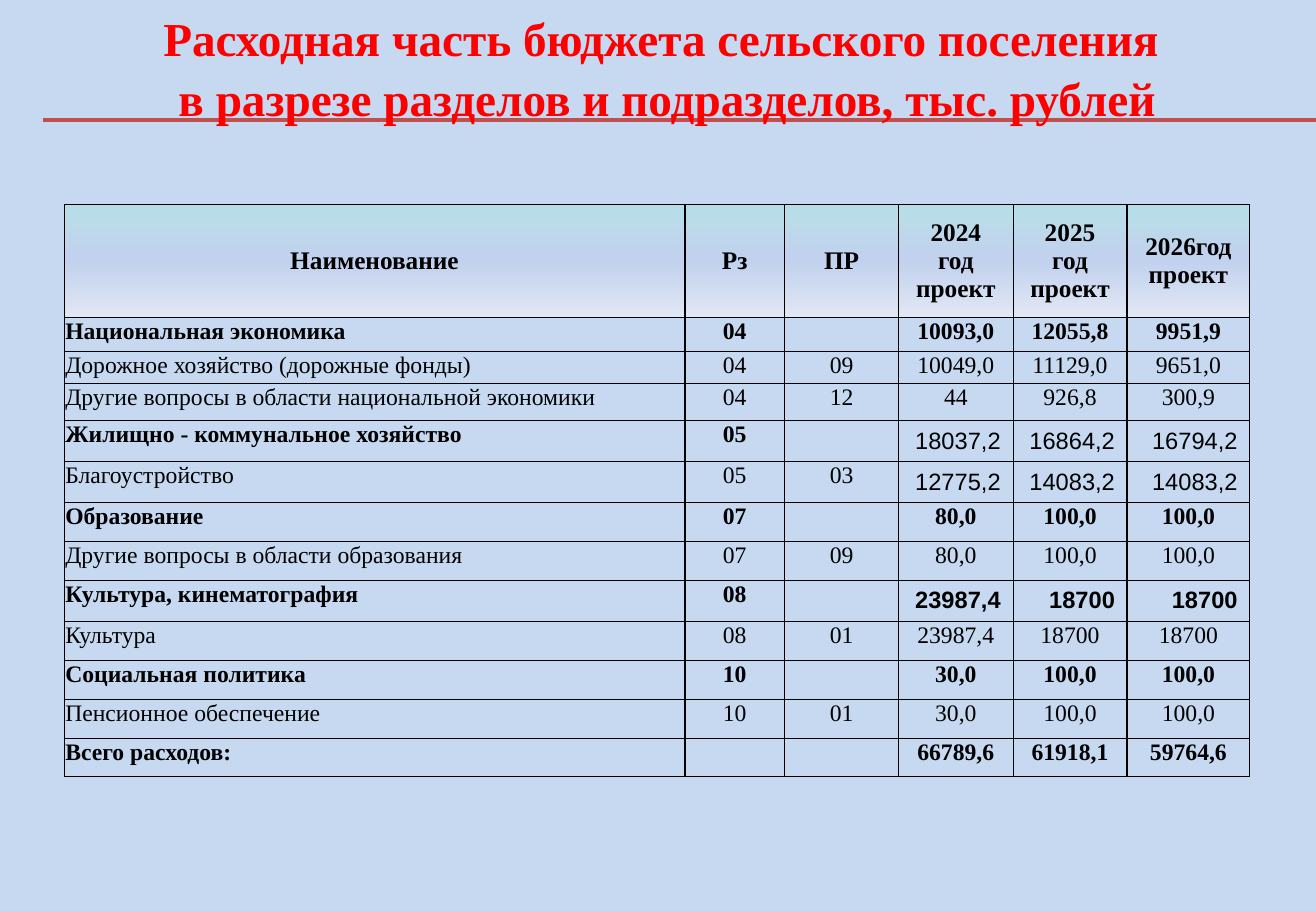
from dataclasses import dataclass

from lxml import etree
from pptx import Presentation
from pptx.dml import color
from pptx.enum import shapes, text
from pptx.oxml import ns
from pptx.util import Pt


@dataclass(frozen=True)
class Theme:
    background: str = "C6D9F1"
    title: str = "FF0000"
    rule: str = "C0504D"
    ink: str = "000000"
    header: tuple = ((0, "B7DEE8"), (50, "C2D1ED"), (100, "E1E8F5"))
    serif: str = "Times New Roman"
    sans: str = "Arial"
    title_size: int = 28
    header_size: int = 15
    body_size: int = 14


THEME = Theme()
ALIGN = text.PP_ALIGN
ANCHOR = text.MSO_ANCHOR
TITLE = ("Расходная часть бюджета сельского поселения ",
         "в разрезе разделов и подразделов, тыс. рублей")
HEADERS = ("Наименование", "Рз", "ПР", "2024 год\nпроект", "2025 год проект", "2026год\nпроект")
COLUMNS = (368, 59, 67.7, 67.7, 67.7, 72.7)
HEADER_HEIGHT = 67
ROWS = (
    (20, "Национальная экономика", "04", "", "10093,0", "12055,8", "9951,9"),
    (19, "Дорожное хозяйство (дорожные фонды) ", "04", "09", "10049,0", "11129,0", "9651,0"),
    (22, "Другие вопросы в области национальной экономики", "04", "12", "44", "926,8", "300,9"),
    (24.3, "Жилищно - коммунальное хозяйство", "05", "", "18037,2", "16864,2", "16794,2"),
    (24.3, "Благоустройство", "05", "03", "12775,2", "14083,2", "14083,2"),
    (23.1, "Образование", "07", "", "80,0", "100,0", "100,0"),
    (23.1, "Другие вопросы в области образования", "07", "09", "80,0", "100,0", "100,0"),
    (24.3, "Культура, кинематография ", "08", "", "23987,4", "18700", "18700"),
    (23.1, "Культура ", "08", "01", "23987,4", "18700", "18700"),
    (23.1, "Социальная политика", "10", "", "30,0", "100,0", "100,0"),
    (23.1, "Пенсионное обеспечение", "10", "01", "30,0", "100,0", "100,0"),
    (23.1, "Всего расходов:", "", "", "66789,6", "61918,1", "59764,6"),
)
SANS_ROWS = {"Жилищно - коммунальное хозяйство": False,
             "Благоустройство": False,
             "Культура, кинематография ": True}


def rgb(value):
    return color.RGBColor.from_string(value)


def add_run(p, content, size, ink, bold=True, font=THEME.serif):
    r = p.add_run()
    r.text = content
    r.font.size = Pt(size)
    r.font.name = font
    r.font.bold = bold
    r.font.color.rgb = rgb(ink)


def add_title(s):
    sp = s.shapes.add_textbox(Pt(33), Pt(0), Pt(724.5), Pt(75))
    tf = sp.text_frame
    tf.word_wrap = True
    p = tf.paragraphs[0]
    p.alignment = ALIGN.CENTER
    p.line_spacing = 1.06
    for i, line in enumerate(TITLE):
        if i:
            p.add_line_break()
        add_run(p, line, THEME.title_size, THEME.title)


def add_rule(s, left, right, y):
    line = s.shapes.add_connector(shapes.MSO_CONNECTOR.STRAIGHT, Pt(left), Pt(y), Pt(right), Pt(y))
    line.line.color.rgb = rgb(THEME.rule)
    line.line.width = Pt(2.5)
    etree.SubElement(line._element.spPr, ns.qn("a:effectLst"))


def set_borders(cell, row, col):
    widths = {
        "L": 1 if col % 2 else 0.5,
        "R": 0.5 if col % 2 else 1,
        "T": 1 if row == 1 else 0.5,
        "B": 1 if row == 0 else 0.5,
    }
    tc_pr = cell._tc.get_or_add_tcPr()
    for i, (side, width) in enumerate(widths.items()):
        ln = etree.Element(ns.qn(f"a:ln{side}"), w=str(Pt(width)))
        fill = etree.SubElement(ln, ns.qn("a:solidFill"))
        etree.SubElement(fill, ns.qn("a:srgbClr"), val=THEME.ink)
        tc_pr.insert(i, ln)


def set_gradient(cell):
    grad = etree.SubElement(cell._tc.get_or_add_tcPr(), ns.qn("a:gradFill"))
    stops = etree.SubElement(grad, ns.qn("a:gsLst"))
    for position, value in THEME.header:
        stop = etree.SubElement(stops, ns.qn("a:gs"), pos=str(position * 1000))
        etree.SubElement(stop, ns.qn("a:srgbClr"), val=value)
    etree.SubElement(grad, ns.qn("a:lin"), ang="5400000", scaled="0")


def set_margins(cell, left, top, right, bottom):
    cell.margin_left, cell.margin_top = Pt(left), Pt(top)
    cell.margin_right, cell.margin_bottom = Pt(right), Pt(bottom)


def fill_header(cell, content):
    set_gradient(cell)
    set_margins(cell, 6.5, 5.5, 6.5, 5.5)
    cell.vertical_anchor = ANCHOR.MIDDLE
    tf = cell.text_frame
    for i, line in enumerate(content.split("\n")):
        p = tf.add_paragraph() if i else tf.paragraphs[0]
        p.alignment = ALIGN.CENTER
        add_run(p, line, THEME.header_size, THEME.ink)


def fill_body(cell, content, col, bold, sans):
    cell.fill.background()
    p = cell.text_frame.paragraphs[0]
    if sans:
        set_margins(cell, 7.2, 3.6, 7.2, 3.6)
        cell.vertical_anchor = ANCHOR.MIDDLE
        p.alignment = ALIGN.RIGHT
    else:
        set_margins(cell, 0.7, 0.7, 0.7, 0)
        cell.vertical_anchor = ANCHOR.TOP
        p.alignment = ALIGN.CENTER if col else ALIGN.JUSTIFY
    if content:
        add_run(p, content, THEME.body_size, THEME.ink, bold, THEME.sans if sans else THEME.serif)
    else:
        etree.SubElement(p._p, ns.qn("a:endParaRPr"), sz=str(THEME.body_size * 100))


def add_budget_table(s):
    heights = [HEADER_HEIGHT] + [row[0] for row in ROWS]
    frame = s.shapes.add_table(len(heights), len(COLUMNS), Pt(38), Pt(121.2),
                               Pt(sum(COLUMNS)), Pt(sum(heights)))
    table = frame.table
    table.first_row = table.horz_banding = False
    for column, width in zip(table.columns, COLUMNS):
        column.width = Pt(width)
    for row, height in zip(table.rows, heights):
        row.height = Pt(height)
    for col, content in enumerate(HEADERS):
        cell = table.cell(0, col)
        fill_header(cell, content)
        set_borders(cell, 0, col)
    for i, (_, *values) in enumerate(ROWS, 1):
        name, _, subsection = values[:3]
        for col, content in enumerate(values):
            cell = table.cell(i, col)
            sans = col > 2 and name in SANS_ROWS
            bold = SANS_ROWS[name] if sans else not subsection
            fill_body(cell, content, col, bold, sans)
            set_borders(cell, i, col)


def main():
    prs = Presentation()
    prs.slide_width, prs.slide_height = Pt(780), Pt(540)
    s = prs.slides.add_slide(prs.slide_layouts[6])
    s.background.fill.solid()
    s.background.fill.fore_color.rgb = rgb(THEME.background)
    add_rule(s, 25.4, 780, 71.2)
    add_title(s)
    add_budget_table(s)
    prs.save("out.pptx")


if __name__ == "__main__":
    main()
